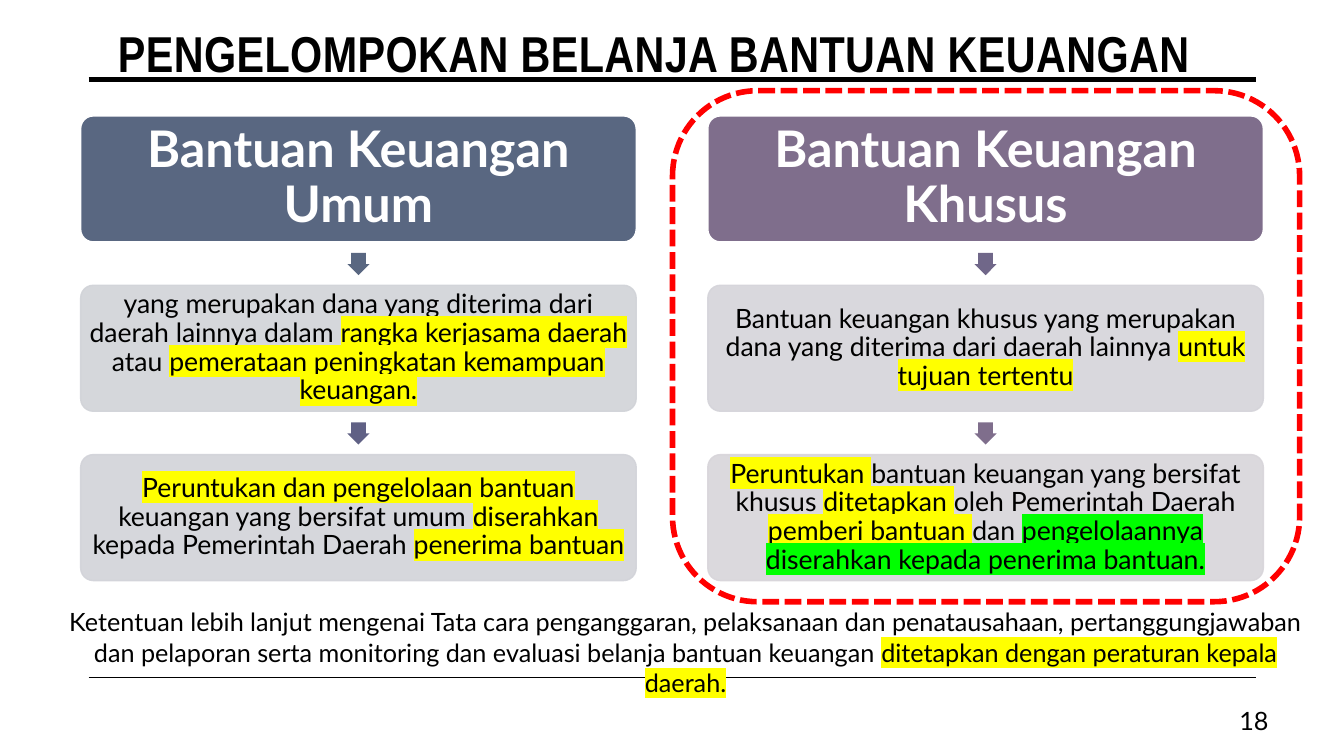
from lxml.etree import SubElement
from pptx import Presentation
from pptx.dml.color import RGBColor
from pptx.enum.dml import MSO_LINE
from pptx.enum.shapes import MSO_CONNECTOR, MSO_SHAPE
from pptx.enum.text import MSO_ANCHOR, MSO_AUTO_SIZE, PP_ALIGN
from pptx.oxml.ns import qn
from pptx.util import Inches, Pt

BLACK = RGBColor(0x00, 0x00, 0x00)
WHITE = RGBColor(0xFF, 0xFF, 0xFF)
RED = RGBColor(0xFF, 0x00, 0x00)
YELLOW = RGBColor(0xFF, 0xFF, 0x00)
GREEN = RGBColor(0x00, 0xFF, 0x00)
SLATE = RGBColor(0x59, 0x67, 0x81)
INDIGO = RGBColor(0x60, 0x61, 0x85)
VIOLET = RGBColor(0x70, 0x67, 0x89)
PLUM = RGBColor(0x7F, 0x6E, 0x8C)
PALE_SLATE = RGBColor(0xD1, 0xD3, 0xD8)
PALE_INDIGO = RGBColor(0xD2, 0xD3, 0xD9)
PALE_VIOLET = RGBColor(0xD5, 0xD4, 0xDA)
PALE_PLUM = RGBColor(0xD8, 0xD5, 0xDA)

CARD_WIDTH, CARD_HEIGHT = 5.51, 1.25
CARD_TOP, CARD_STEP = 1.15, 1.68
ARROW_SIZE, ARROW_GAP = 0.22, 0.1

# Each column: left edge, heading and its colour, then (arrow, card, spans) steps
COLUMNS = [
    (0.8, "Bantuan Keuangan Umum", SLATE, [
        (SLATE, PALE_SLATE, [
            ("yang merupakan dana yang diterima dari daerah lainnya dalam ", None),
            ("rangka kerjasama daerah ", YELLOW),
            ("atau ", None),
            ("pemerataan peningkatan kemampuan keuangan.", YELLOW)]),
        (INDIGO, PALE_INDIGO, [
            ("Peruntukan dan pengelolaan bantuan ", YELLOW),
            ("keuangan yang bersifat umum ", None),
            ("diserahkan ", YELLOW),
            ("kepada Pemerintah Daerah ", None),
            ("penerima bantuan", YELLOW)]),
    ]),
    (7.02, "Bantuan Keuangan Khusus", PLUM, [
        (VIOLET, PALE_VIOLET, [
            ("Bantuan keuangan khusus yang merupakan dana yang diterima "
             "dari daerah lainnya ", None),
            ("untuk tujuan tertentu", YELLOW)]),
        (PLUM, PALE_PLUM, [
            ("Peruntukan ", YELLOW),
            ("bantuan keuangan yang bersifat khusus ", None),
            ("ditetapkan ", YELLOW),
            ("oleh Pemerintah Daerah ", None),
            ("pemberi bantuan ", YELLOW),
            ("dan ", None),
            ("pengelolaannya diserahkan kepada penerima bantuan.", GREEN)]),
    ]),
]

CLOSING = [
    ("Ketentuan lebih lanjut mengenai Tata cara penganggaran, pelaksanaan dan "
     "penatausahaan, pertanggungjawaban dan pelaporan serta monitoring dan "
     "evaluasi belanja bantuan keuangan ", None),
    ("ditetapkan dengan peraturan kepala daerah.", YELLOW),
]


def write_text(frame, spans, size=18, font="Lato", color=BLACK, bold=False,
               align=PP_ALIGN.CENTER, anchor=MSO_ANCHOR.TOP, line_spacing=None,
               inset=None, letter_spacing=None):
    """Fill a text frame with one paragraph of (text, highlight) spans."""
    frame.word_wrap = True
    frame.auto_size = MSO_AUTO_SIZE.NONE
    frame.vertical_anchor = anchor
    if inset is not None:
        frame.margin_left = frame.margin_right = Inches(inset)
        frame.margin_top = frame.margin_bottom = Inches(inset)
    para = frame.paragraphs[0]
    para.alignment = align
    para.line_spacing = line_spacing
    for text, highlight in spans:
        span = para.add_run()
        span.text = text
        span.font.size = Pt(size)
        span.font.name = font
        span.font.bold = bold
        span.font.color.rgb = color
        properties = span.font._element
        if letter_spacing:
            properties.set("spc", str(round(letter_spacing * 100)))
        if highlight:
            marker = SubElement(properties, qn("a:highlight"))
            SubElement(marker, qn("a:srgbClr")).set("val", str(highlight))
            properties.find(qn("a:solidFill")).addnext(marker)


def add_text(slide, left, top, width, height, spans, **style):
    box = slide.shapes.add_textbox(
        Inches(left), Inches(top), Inches(width), Inches(height))
    write_text(box.text_frame, spans, **style)


def add_rule(slide, top, weight):
    rule = slide.shapes.add_connector(
        MSO_CONNECTOR.STRAIGHT, Inches(0.88), Inches(top), Inches(12.46), Inches(top))
    rule.line.color.rgb = BLACK
    rule.line.width = Pt(weight)
    SubElement(rule._element.spPr, qn("a:effectLst"))


def add_block(slide, kind, left, top, width, height, fill=None, line=None, weight=1):
    block = slide.shapes.add_shape(
        kind, Inches(left), Inches(top), Inches(width), Inches(height))
    block.shadow.inherit = False
    if fill is None:
        block.fill.background()
    else:
        block.fill.solid()
        block.fill.fore_color.rgb = fill
    if line is None:
        block.line.fill.background()
    else:
        block.line.color.rgb = line
        block.line.width = Pt(weight)
    return block


def add_card(slide, left, top, fill, line, spans, opacity=None, **style):
    card = add_block(slide, MSO_SHAPE.ROUNDED_RECTANGLE, left, top,
                     CARD_WIDTH, CARD_HEIGHT, fill, line)
    card.adjustments[0] = 0.1
    if opacity:
        for color in card._element.spPr.iter(qn("a:srgbClr")):
            SubElement(color, qn("a:alpha")).set("val", str(opacity * 1000))
    write_text(card.text_frame, spans, anchor=MSO_ANCHOR.MIDDLE,
               line_spacing=0.9, **style)


def add_down_arrow(slide, left, top, fill):
    arrow = add_block(slide, MSO_SHAPE.RIGHT_ARROW, left, top,
                      ARROW_SIZE, ARROW_SIZE, fill)
    arrow.adjustments[0] = 0.667
    arrow.rotation = 90


def add_column(slide, left, heading, color, steps):
    add_card(slide, left, CARD_TOP, color, WHITE, [(heading, None)],
             size=36, color=WHITE, bold=True, inset=0.05)
    arrow_left = left + (CARD_WIDTH - ARROW_SIZE) / 2
    for number, (arrow_color, card_color, spans) in enumerate(steps, start=1):
        top = CARD_TOP + number * CARD_STEP
        add_down_arrow(slide, arrow_left, top - ARROW_GAP - ARROW_SIZE, arrow_color)
        add_card(slide, left, top, card_color, card_color, spans,
                 opacity=90, size=19, inset=0.03)


def add_title(slide, text):
    title = slide.shapes.title
    title.left, title.top = Inches(0.84), Inches(0.17)
    title.width, title.height = Inches(11.48), Inches(1.07)
    write_text(title.text_frame, [(text, None)], size=36, font="Arial Narrow",
               bold=True, align=PP_ALIGN.LEFT, letter_spacing=0.3)
    title.text_frame.margin_left = Inches(0.33)


def main():
    deck = Presentation()
    deck.slide_width, deck.slide_height = Inches(13.33), Inches(7.5)
    slide = deck.slides.add_slide(deck.slide_layouts[5])

    # Frame of the page: title, rules and page number
    add_title(slide, "PENGELOMPOKAN BELANJA BANTUAN KEUANGAN")
    add_rule(slide, 0.79, 3.5)
    add_rule(slide, 6.72, 1)
    add_text(slide, 11.94, 6.95, 0.74, 0.4, [("18", None)],
             align=PP_ALIGN.RIGHT, anchor=MSO_ANCHOR.MIDDLE)

    # The two kinds of aid
    for column in COLUMNS:
        add_column(slide, *column)

    # Closing note and emphasis around the right column
    add_text(slide, 0.45, 5.97, 12.7, 1.01, CLOSING)
    emphasis = add_block(slide, MSO_SHAPE.ROUNDED_RECTANGLE, 6.67, 0.9, 6.22, 5.07,
                         line=RED, weight=4)
    emphasis.line.dash_style = MSO_LINE.SQUARE_DOT

    deck.save("out.pptx")


if __name__ == "__main__":
    main()
